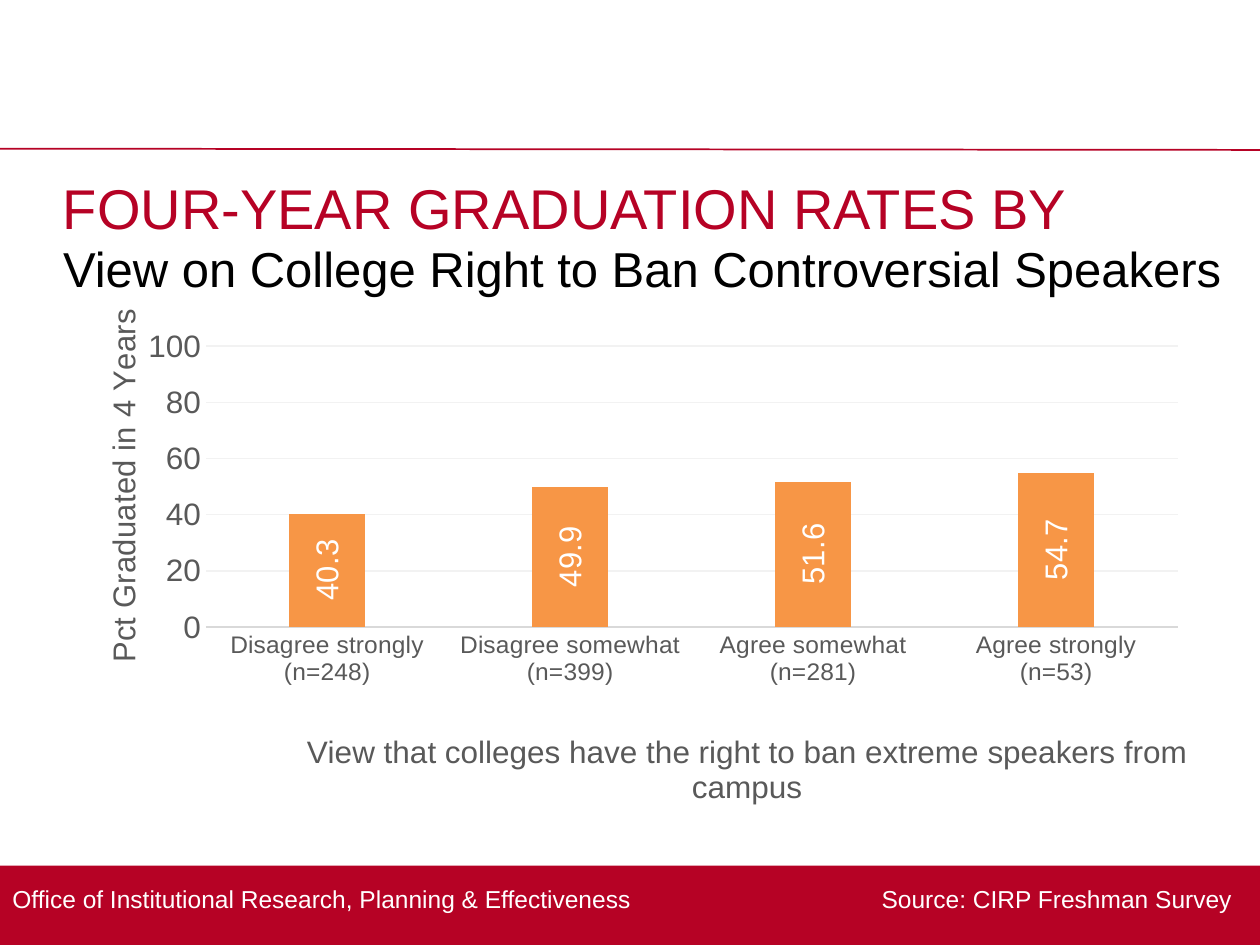
from dataclasses import dataclass

from lxml import etree
from pptx import Presentation
from pptx import util as u
from pptx.chart.data import CategoryChartData
from pptx.dml.color import RGBColor
from pptx.enum import chart as charts
from pptx.enum import shapes, text
from pptx.oxml import ns


@dataclass(frozen=True)
class Theme:
    font: str = "Arial"
    crimson: str = "B60225"
    black: str = "000000"
    white: str = "FFFFFF"
    grey: str = "595959"
    axis: str = "D9D9D9"
    grid: str = "F2F2F2"
    bar: str = "F79646"
    title: int = 32
    subtitle: int = 28
    chart: int = 18
    small: int = 14
    hairline: float = 0.75


@dataclass(frozen=True)
class Area:
    left: float
    top: float
    width: float
    height: float

    def lengths(self) -> list:
        return [u.Inches(v) for v in (self.left, self.top, self.width, self.height)]


@dataclass(frozen=True)
class Group:
    view: str
    students: int
    rate: float


THEME = Theme()
GROUPS = [
    Group("Disagree strongly", 248, 40.3),
    Group("Disagree somewhat", 399, 49.9),
    Group("Agree somewhat", 281, 51.6),
    Group("Agree strongly", 53, 54.7),
]


def style_font(font, size: int, color: str) -> None:
    font.name = THEME.font
    font.size = u.Pt(size)
    font.bold = False
    font.color.rgb = RGBColor.from_string(color)


def style_line(line, color: str, width: float) -> None:
    line.color.rgb = RGBColor.from_string(color)
    line.width = u.Pt(width)


def add_text(page, area: Area, content: str, *, size: int, color: str,
             side: float = 0, top: float = 0,
             anchor=text.MSO_ANCHOR.TOP, right_tab: float = 0) -> None:
    box = page.shapes.add_textbox(*area.lengths())
    frame = box.text_frame
    frame.word_wrap = True
    frame.vertical_anchor = anchor
    frame.margin_left = frame.margin_right = u.Inches(side)
    frame.margin_top, frame.margin_bottom = u.Inches(top), 0
    para = frame.paragraphs[0]
    if right_tab:
        tabs = etree.SubElement(para._p.get_or_add_pPr(), ns.qn("a:tabLst"))
        etree.SubElement(tabs, ns.qn("a:tab"), pos=str(u.Inches(right_tab)), algn="r")
    span = para.add_run()
    span.text = content
    style_font(span.font, size, color)


def add_band(page, area: Area) -> None:
    band = page.shapes.add_shape(shapes.MSO_SHAPE.RECTANGLE, *area.lengths())
    band.shadow.inherit = False
    band.fill.solid()
    band.fill.fore_color.rgb = RGBColor.from_string(THEME.crimson)
    band.line.fill.background()


def add_rule(page, start: tuple[float, float], end: tuple[float, float]) -> None:
    rule = page.shapes.add_connector(
        shapes.MSO_CONNECTOR.STRAIGHT, *[u.Inches(v) for v in start + end])
    style_line(rule.line, THEME.crimson, 1)
    etree.SubElement(rule._element.spPr, ns.qn("a:effectLst"))


def place(element, **values: float | str) -> None:
    for old in element.findall(ns.qn("c:layout")):
        element.remove(old)
    layout = etree.Element(ns.qn("c:layout"))
    manual = etree.SubElement(layout, ns.qn("c:manualLayout"))
    for name, value in values.items():
        etree.SubElement(manual, ns.qn(f"c:{name}"), val=str(value))
    element.insert(len(element.findall(ns.qn("c:tx"))), layout)


def turn_upright(body) -> None:
    body.set("rot", "-5400000")
    body.set("vert", "horz")


def style_axis(axis, title: str, size: int, x: float, y: float) -> None:
    axis.major_tick_mark = axis.minor_tick_mark = charts.XL_TICK_MARK.NONE
    style_font(axis.tick_labels.font, size, THEME.grey)
    frame = axis.axis_title.text_frame
    span = frame.paragraphs[0].add_run()
    span.text = title
    style_font(span.font, THEME.chart, THEME.grey)
    place(axis.axis_title._element, xMode="edge", yMode="edge", x=x, y=y)


def add_rate_chart(page, area: Area, groups: list[Group]) -> None:
    data = CategoryChartData(number_format="#,##0.0")
    data.categories = [f"{group.view}\n(n={group.students})" for group in groups]
    data.add_series("Series 1", [group.rate for group in groups])
    chart = page.shapes.add_chart(
        charts.XL_CHART_TYPE.COLUMN_CLUSTERED, *area.lengths(), data).chart
    chart.has_title = chart.has_legend = False
    style_font(chart.font, THEME.chart, THEME.black)
    place(chart._chartSpace.chart.plotArea, layoutTarget="inner",
          xMode="edge", yMode="edge", x=0.126, y=0.073, w=0.857, h=0.568)

    views, rates = chart.category_axis, chart.value_axis
    style_axis(views, "View that colleges have the right to ban extreme speakers from campus",
               THEME.small, 0.21, 0.84)
    style_line(views.format.line, THEME.axis, THEME.hairline)
    style_axis(rates, "Pct Graduated in 4 Years", THEME.chart, 0.03, 0)
    turn_upright(rates.axis_title.text_frame._txBody.bodyPr)
    rates.minimum_scale, rates.maximum_scale, rates.major_unit = 0, 100, 20
    rates.tick_labels.number_format = "0"
    rates.tick_labels.number_format_is_linked = False
    rates.format.line.fill.background()
    style_line(rates.major_gridlines.format.line, THEME.grid, THEME.hairline)

    plot = chart.plots[0]
    plot.gap_width, plot.overlap = 219, -27
    plot.vary_by_categories = False
    bars = plot.series[0]
    bars.format.fill.solid()
    bars.format.fill.fore_color.rgb = RGBColor.from_string(THEME.bar)
    labels = bars.data_labels
    labels.show_value = True
    labels.position = charts.XL_LABEL_POSITION.CENTER
    labels.number_format = "#,##0.0"
    labels.number_format_is_linked = False
    style_font(labels.font, THEME.chart, THEME.white)
    turn_upright(labels._element.find(".//" + ns.qn("a:bodyPr")))


def main() -> None:
    deck = Presentation()
    deck.slide_width, deck.slide_height = u.Inches(10), u.Inches(7.5)
    page = deck.slides.add_slide(deck.slide_layouts[6])
    add_band(page, Area(0, 6.87, 10, 0.63))
    add_rule(page, (0, 1.18), (10, 1.19))
    add_text(page, Area(0, 6.88, 10, 0.51),
             "Office of Institutional Research, Planning & Effectiveness"
             "\tSource: CIRP Freshman Survey",
             size=THEME.small, color=THEME.white, side=0.1,
             anchor=text.MSO_ANCHOR.MIDDLE, right_tab=9.68)
    add_text(page, Area(0.5, 1.85, 9.29, 0.45),
             "View on College Right to Ban Controversial Speakers",
             size=THEME.subtitle, color=THEME.black, top=0.04)
    add_text(page, Area(0.5, 1.29, 9, 0.87), "FOUR-YEAR GRADUATION RATES BY",
             size=THEME.title, color=THEME.crimson, top=0.09)
    add_rate_chart(page, Area(0.5, 2.46, 9, 4), GROUPS)
    deck.save("out.pptx")


if __name__ == "__main__":
    main()
